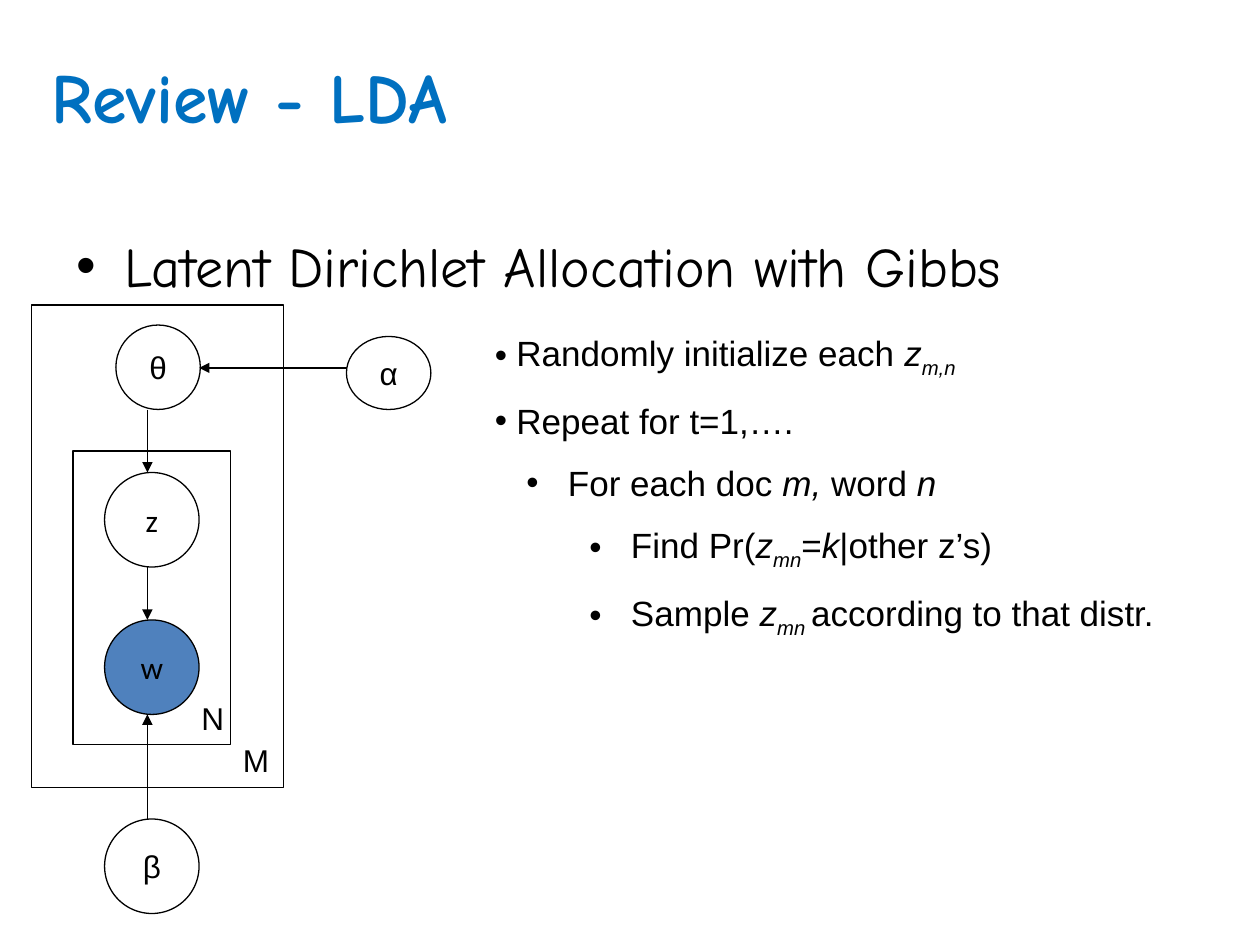
from pptx import Presentation
from pptx.dml.color import RGBColor
from pptx.enum.shapes import MSO_CONNECTOR, MSO_SHAPE
from pptx.enum.text import MSO_ANCHOR, PP_ALIGN
from pptx.oxml.ns import qn
from pptx.util import Inches, Pt
from lxml.etree import SubElement

BLACK, BLUE, OBSERVED = "000000", "0070C0", "4F81BD"

# Each step: indent level, then (text, style); i = italic, s = italic subscript
STEPS = [
    (0, [("Randomly initialize each ", ""), ("z", "i"), ("m,n", "s")]),
    (0, [("Repeat for t=1,….", "")]),
    (1, [("For each doc ", ""), ("m, ", "i"), ("word ", ""), ("n", "i")]),
    (2, [("Find Pr(", ""), ("z", "i"), ("mn", "s"), ("=", ""), ("k", "i"),
         ("|other z’s)", "")]),
    (2, [("Sample ", ""), ("z", "i"), ("mn ", "s"),
         ("according to that distr.", "")]),
]
STEP_INDENTS = [(0.17, 0.17), (0.58, 0.33), (1.08, 0.33)]  # left, hanging

# Graph parts, in inches from the corner of the outer plate
PLATES = [(0, 0, 2, 3.83), (0.33, 1.16, 1.25, 2.33)]
NODES = [
    ("θ", 0.67, 0.16, 0.67, 0.67, "Arial", None),
    ("α", 2.5, 0.25, 0.67, 0.58, "Arial", None),
    ("z", 0.58, 1.33, 0.75, 0.75, "Calibri", None),
    ("w", 0.58, 2.5, 0.75, 0.75, "Calibri", OBSERVED),
    ("β", 0.58, 4.08, 0.75, 0.75, "Arial", None),
]
ARROWS = [
    (2.5, 0.5, 1.33, 0.5),      # α to θ
    (0.92, 0.83, 0.92, 1.33),   # θ to z
    (0.92, 2.08, 0.92, 2.5),    # z to w
    (0.92, 4.08, 0.92, 3.25),   # β to w
]
PLATE_LABELS = [("N", 1.25, 3.08, 0.33), ("M", 1.58, 3.41, 0.25)]


def color(hex_value):
    return RGBColor.from_string(hex_value)


def set_font(paragraph, size, name, hex_value=BLACK, bold=False):
    font = paragraph.font
    font.size, font.name, font.bold = Pt(size), name, bold
    font.color.rgb = color(hex_value)


def add_bullet(paragraph, left, hanging):
    props = paragraph._p.get_or_add_pPr()
    props.set("marL", str(Inches(left)))
    props.set("indent", str(-Inches(hanging)))
    bullet_font = SubElement(props, qn("a:buFont"))
    bullet_font.set("typeface", "Arial")
    SubElement(props, qn("a:buChar")).set("char", "•")


def add_text_frame(slide, left, top, width, height):
    frame = slide.shapes.add_textbox(
        Inches(left), Inches(top), Inches(width), Inches(height)).text_frame
    frame.word_wrap = True
    return frame


def add_outline(slide, preset, left, top, width, height, fill=None):
    shape = slide.shapes.add_shape(
        preset, Inches(left), Inches(top), Inches(width), Inches(height))
    shape.shadow.inherit = False
    if fill:
        shape.fill.solid()
        shape.fill.fore_color.rgb = color(fill)
    else:
        shape.fill.background()
    shape.line.color.rgb = color(BLACK)
    shape.line.width = Pt(0.75)
    return shape


def add_arrow(slide, x1, y1, x2, y2):
    arrow = slide.shapes.add_connector(
        MSO_CONNECTOR.STRAIGHT, Inches(x1), Inches(y1), Inches(x2), Inches(y2))
    arrow.line.color.rgb = color(BLACK)
    arrow.line.width = Pt(0.75)
    SubElement(arrow.line._get_or_add_ln(), qn("a:tailEnd")).set("type", "triangle")
    SubElement(arrow._element.spPr, qn("a:effectLst"))


def add_title(slide, left, top, width, height):
    frame = add_text_frame(slide, left, top, width, height)
    frame.vertical_anchor = MSO_ANCHOR.MIDDLE
    title = frame.paragraphs[0]
    title.text = "Review - LDA"
    set_font(title, 40, "Comic Neue", BLUE, bold=True)


def add_topic(slide, left, top, width, height):
    frame = add_text_frame(slide, left, top, width, height)
    frame.margin_left, frame.margin_top = Inches(0.3), Inches(0.46)
    topic = frame.paragraphs[0]
    topic.text = "Latent Dirichlet Allocation with Gibbs"
    add_bullet(topic, 0.38, 0.38)
    set_font(topic, 32, "Comic Neue")


def add_plate_diagram(slide, left, top):
    for x, y, width, height in PLATES:
        add_outline(slide, MSO_SHAPE.RECTANGLE, left + x, top + y, width, height)
    for name, x, y, width, height, font_name, fill in NODES:
        node = add_outline(slide, MSO_SHAPE.OVAL, left + x, top + y,
                           width, height, fill)
        frame = node.text_frame
        frame.word_wrap = False
        frame.vertical_anchor = MSO_ANCHOR.MIDDLE
        label = frame.paragraphs[0]
        label.text = name
        label.alignment = PP_ALIGN.CENTER
        set_font(label, 18, font_name)
    for x1, y1, x2, y2 in ARROWS:
        add_arrow(slide, left + x1, top + y1, left + x2, top + y2)
    for name, x, y, width in PLATE_LABELS:
        label = add_text_frame(slide, left + x, top + y, width, 0.4).paragraphs[0]
        label.text = name
        set_font(label, 18, "Arial")


def add_steps(slide, left, top, width, height):
    frame = add_text_frame(slide, left, top, width, height)
    for index, (level, pieces) in enumerate(STEPS):
        step = frame.add_paragraph() if index else frame.paragraphs[0]
        step.level = level
        step.space_before = Pt(11.5 if index else 0)
        add_bullet(step, *STEP_INDENTS[level])
        set_font(step, 20, "Arial")
        for text, style in pieces:
            run = step.add_run()
            run.text = text
            if style:
                run.font.italic = True
            if style == "s":
                run._r.get_or_add_rPr().set("baseline", "-25000")


def main():
    deck = Presentation()
    deck.slide_width, deck.slide_height = Inches(10), Inches(7.5)
    slide = deck.slides.add_slide(deck.slide_layouts[6])
    add_title(slide, 0.31, 0.32, 9.46, 0.88)
    add_topic(slide, 0.31, 1.38, 9.46, 5.58)
    add_plate_diagram(slide, 0.25, 2.42)
    add_steps(slide, 3.83, 2.58, 6.17, 2.43)
    deck.save("out.pptx")


if __name__ == "__main__":
    main()
